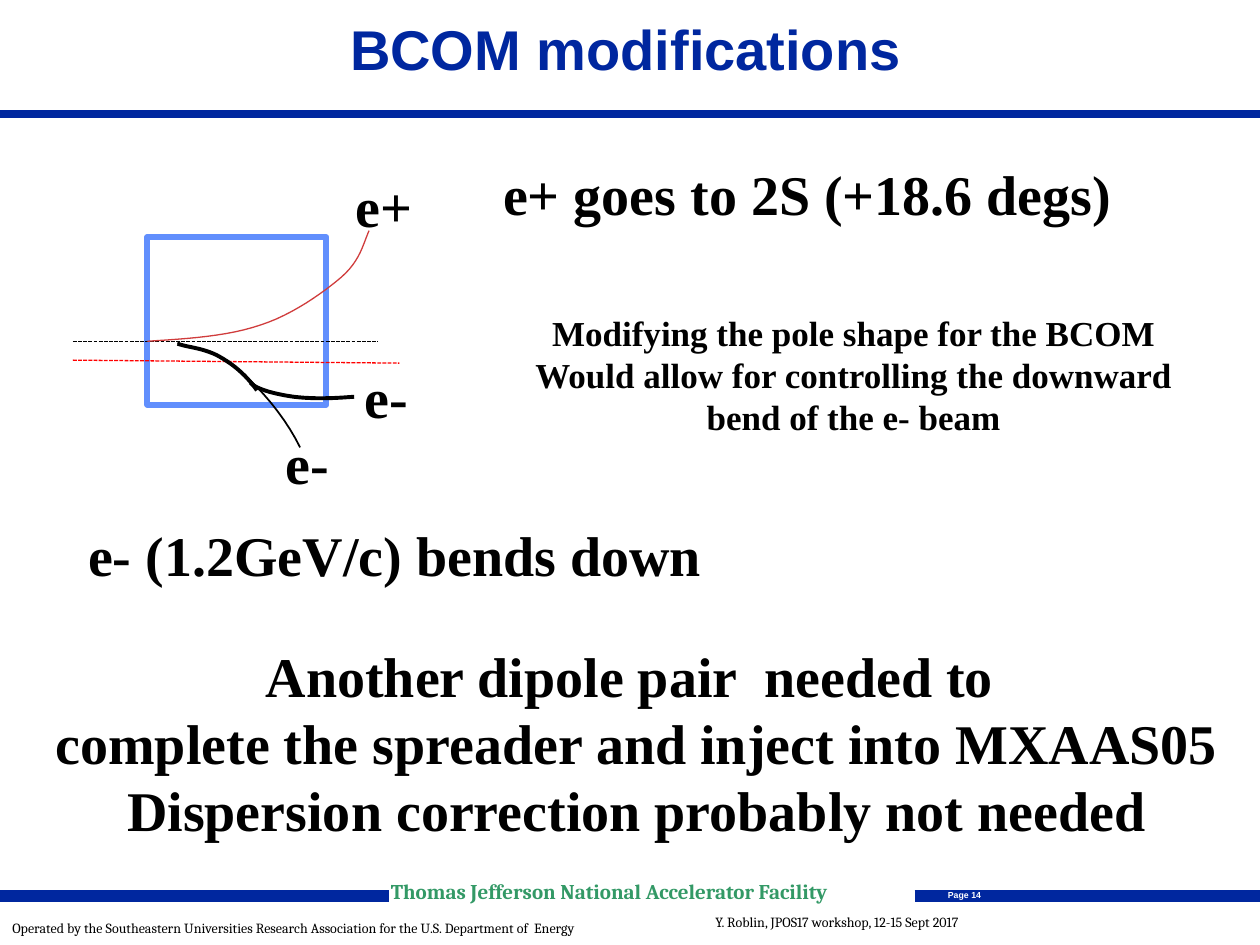
"""Builds the slide on BCOM modifications and the e+/e- beam paths."""
from dataclasses import dataclass

from lxml import etree
from pptx import Presentation
from pptx import util as u
from pptx.dml.color import RGBColor
from pptx.enum import dml, shapes, text
from pptx.oxml.ns import qn

NAVY, BLACK, RED = "00279F", "000000", "FF0000"
SERIF, FOOTER = "Times New Roman", "Cambria"
STEPS = 12


@dataclass(frozen=True)
class Rule:
    start: tuple[float, float]
    end: tuple[float, float]
    color: str
    width: float
    dashed: bool = False


@dataclass(frozen=True)
class Beam:
    points: tuple[tuple[float, float], ...]
    color: str
    width: float


@dataclass(frozen=True)
class Label:
    words: str
    box: tuple[float, float, float, float]
    size: float = 32


RULES = [
    Rule((0, 2.29), (25.4, 2.29), NAVY, 4.5),
    Rule((18.44, 18.06), (25.4, 18.06), NAVY, 7.25),
    Rule((0, 18.06), (7.85, 18.06), NAVY, 7.25),
    Rule((1.47, 6.88), (7.62, 6.88), BLACK, 0.75, True),
    Rule((1.47, 7.26), (8.05, 7.32), RED, 0.75, True),
]
BEAMS = [
    Beam(((2.97, 6.88), (3.78, 6.83), (4.6, 6.78), (5.26, 6.55), (5.89, 6.35),
          (6.53, 5.89), (6.88, 5.59), (7.26, 5.26), (7.32, 4.93), (7.44, 4.65)),
         "D03C3C", 0.75),
    Beam(((3.58, 6.91), (3.81, 7.01), (4.06, 7.01), (4.37, 7.16),
          (5, 7.5), (5.7, 8.3), (6.05, 9.02)), BLACK, 1),
    Beam(((3.58, 6.93), (3.81, 7.01), (4.06, 7.01), (4.37, 7.16),
          (4.67, 7.32), (4.95, 7.54), (5.18, 7.87)), BLACK, 2.25),
    Beam(((5.05, 7.72), (5.21, 7.87), (5.59, 7.95), (5.92, 8),
          (6.35, 8.05), (6.73, 8.03), (7.14, 8)), BLACK, 2.25),
]
LABELS = [
    Label("e+", (6.91, 3.33, 1.68, 1.63)),
    Label("e-", (5.49, 8.51, 1.4, 1.63)),
    Label("e-", (7.09, 7.19, 1.4, 1.63)),
    Label("e+ goes to 2S (+18.6 degs)", (9.83, 3.1, 12.9, 1.63)),
    Label("e- (1.2GeV/c) bends down", (1.47, 10.36, 12.98, 1.63)),
    Label("Modifying the pole shape for the BCOM\n"
          "Would allow for controlling the downward\n"
          "bend of the e- beam", (10.49, 6.15, 13.44, 2.82), 20),
    Label("Another dipole pair  needed to \v"
          "complete the spreader and inject into MXAAS05\n"
          "Dispersion correction probably not needed", (0.76, 12.8, 24.16, 4.37)),
]


def rgb(value: str) -> RGBColor:
    return RGBColor.from_string(value)


def style_line(line, color: str, width: float) -> None:
    line.color.rgb = rgb(color)
    line.width = u.Pt(width)


def add_text(slide, words: str, box: tuple[float, float, float, float], *,
             size: float, font: str = SERIF, color: str = BLACK, bold: bool = True,
             align=text.PP_ALIGN.CENTER, anchor=text.MSO_ANCHOR.TOP,
             spacing: float = 1, wrap: bool = False, inset: bool = True) -> None:
    frame = slide.shapes.add_textbox(*map(u.Cm, box)).text_frame
    frame.word_wrap = wrap
    frame.vertical_anchor = anchor
    if not inset:
        frame.margin_left = frame.margin_right = 0
        frame.margin_top = frame.margin_bottom = 0
    frame.text = words
    for paragraph in frame.paragraphs:
        paragraph.alignment = align
        paragraph.line_spacing = spacing
        for run in paragraph.runs:
            run.font.name, run.font.size, run.font.bold = font, u.Pt(size), bold
            run.font.color.rgb = rgb(color)


def add_rule(slide, rule: Rule) -> None:
    connector = slide.shapes.add_connector(
        shapes.MSO_CONNECTOR.STRAIGHT, *map(u.Cm, rule.start + rule.end))
    style_line(connector.line, rule.color, rule.width)
    if rule.dashed:
        connector.line.dash_style = dml.MSO_LINE.SQUARE_DOT
    etree.SubElement(connector._element.spPr, qn("a:effectLst"))


def bezier(a: float, b: float, c: float, d: float, t: float) -> float:
    s = 1 - t
    return s**3 * a + 3 * s * s * t * b + 3 * s * t * t * c + t**3 * d


def add_beam(slide, beam: Beam) -> None:
    vertices = []
    for first in range(0, len(beam.points) - 1, 3):
        xs, ys = zip(*beam.points[first:first + 4])
        for step in range(1, STEPS + 1):
            t = step / STEPS
            vertices.append((u.Cm(bezier(*xs, t)), u.Cm(bezier(*ys, t))))
    builder = slide.shapes.build_freeform(*map(u.Cm, beam.points[0]))
    builder.add_line_segments(vertices, close=False)
    path_shape = builder.convert_to_shape()
    path_shape.shadow.inherit = False
    path_shape.fill.background()
    style_line(path_shape.line, beam.color, beam.width)


def add_magnet(slide) -> None:
    magnet = slide.shapes.add_shape(
        shapes.MSO_SHAPE.RECTANGLE, *map(u.Cm, (2.97, 4.78, 3.61, 3.38)))
    magnet.shadow.inherit = False
    magnet.fill.background()
    style_line(magnet.line, "618FFD", 3.25)


def main() -> None:
    deck = Presentation()
    deck.slide_width, deck.slide_height = u.Cm(25.4), u.Cm(19.05)
    slide = deck.slides.add_slide(deck.slide_layouts[6])

    add_magnet(slide)
    for rule in RULES:
        add_rule(slide, rule)
    for beam in BEAMS:
        add_beam(slide, beam)

    add_text(slide, "BCOM modifications", (0.46, 0.05, 24.31, 2.06), size=32,
             font="Arial", color=NAVY, anchor=text.MSO_ANCHOR.MIDDLE,
             spacing=0.85, wrap=True)
    for label in LABELS:
        add_text(slide, label.words, label.box, size=label.size)

    left = text.PP_ALIGN.LEFT
    add_text(slide, "Thomas Jefferson National Accelerator Facility",
             (7.88, 17.81, 10.6, 0.48), size=12, font=FOOTER, color="339966",
             align=left, spacing=0.8, wrap=True, inset=False)
    add_text(slide, "Page 14", (18.85, 17.81, 1.19, 0.46), size=5,
             font="Arial", color="FFFFFF")
    for words, box in (
        ("Operated by the Southeastern Universities Research Association "
         "for the U.S. Department of  Energy", (0, 18.54, 11.86, 0.46)),
        ("Y. Roblin, JPOS17 workshop, 12-15 Sept 2017", (14.17, 18.42, 6.35, 0.46)),
    ):
        add_text(slide, words, box, size=8, font=FOOTER, bold=False,
                 align=left, spacing=0.6, wrap=True)

    deck.save("out.pptx")


if __name__ == "__main__":
    main()
